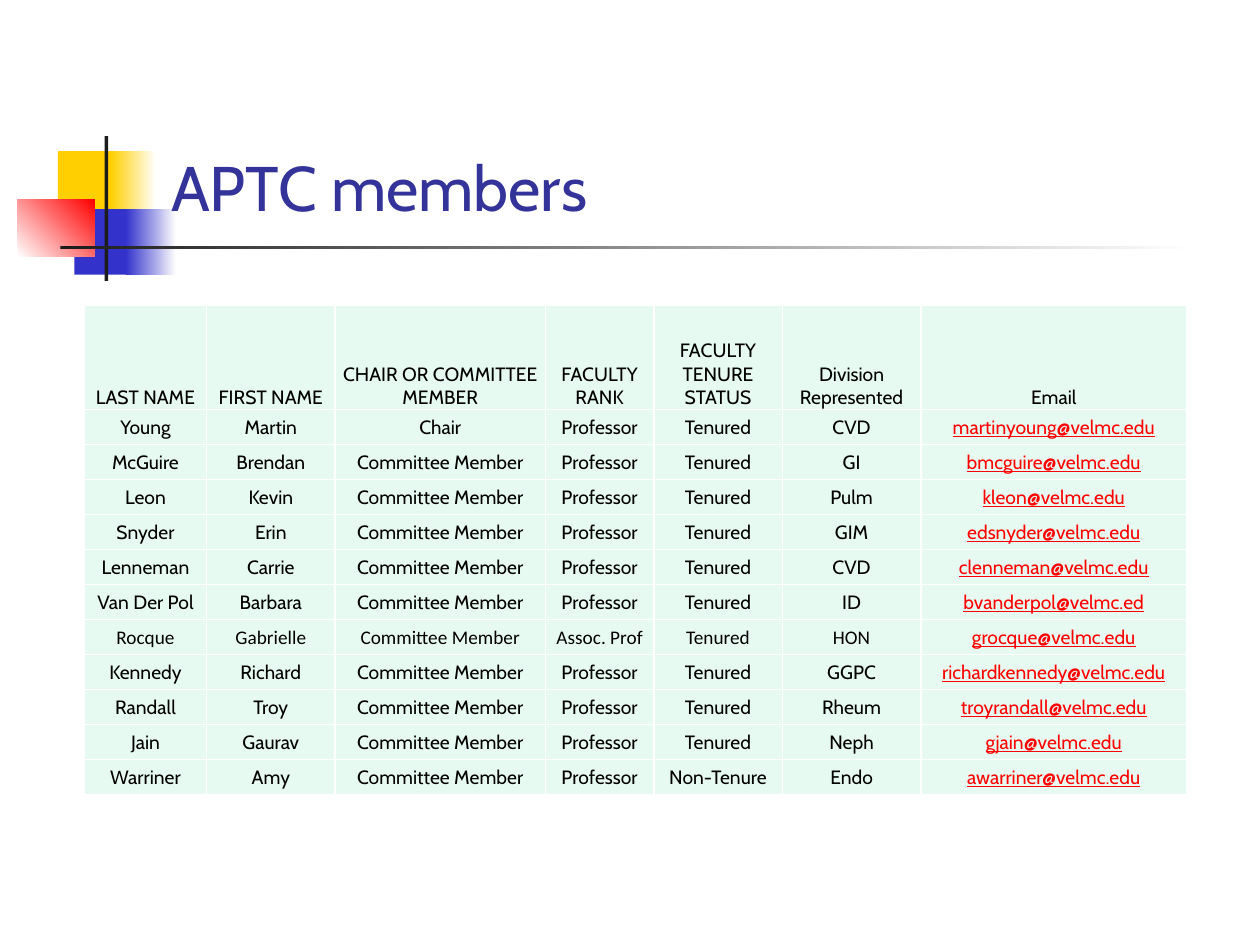
from lxml.etree import SubElement
from pptx import Presentation
from pptx.dml.color import RGBColor
from pptx.enum.shapes import MSO_SHAPE
from pptx.enum.text import MSO_ANCHOR, PP_ALIGN
from pptx.oxml.ns import qn
from pptx.util import Inches, Pt

WHITE = RGBColor(0xFF, 0xFF, 0xFF)
BLACK = RGBColor(0x00, 0x00, 0x00)
YELLOW = RGBColor(0xFF, 0xCF, 0x01)
BLUE = RGBColor(0x33, 0x33, 0xCC)
RED = RGBColor(0xFF, 0x00, 0x00)
CHARCOAL = RGBColor(0x1C, 0x1C, 0x1C)
NAVY = RGBColor(0x33, 0x33, 0x99)
MINT = RGBColor(0xE7, 0xFA, 0xF1)

FONT = "Cabin"
TITLE = "APTC members"
MAIL_DOMAIN = "@velmc.edu"

HEADINGS = ["LAST NAME", "FIRST NAME", "CHAIR OR COMMITTEE MEMBER", "FACULTY RANK",
            "FACULTY TENURE STATUS", "Division Represented", "Email"]
COLUMN_WIDTHS = [0.97, 1.02, 1.67, 0.86, 1.02, 1.1, 2.11]

# last name, first name, division, e-mail, and whatever differs from USUAL
USUAL = {"role": "Committee Member", "rank": "Professor", "tenure": "Tenured", "font": FONT}
MEMBERS = [
    ("Young", "Martin", "CVD", "martinyoung" + MAIL_DOMAIN, {"role": "Chair"}),
    ("McGuire", "Brendan", "GI", "bmcguire" + MAIL_DOMAIN, {}),
    ("Leon", "Kevin", "Pulm", "kleon" + MAIL_DOMAIN, {}),
    ("Snyder", "Erin", "GIM", "edsnyder" + MAIL_DOMAIN, {}),
    ("Lenneman", "Carrie", "CVD", "clenneman" + MAIL_DOMAIN, {}),
    ("Van Der Pol", "Barbara", "ID", "bvanderpol@velmc.ed", {}),
    ("Rocque", "Gabrielle", "HON", "grocque" + MAIL_DOMAIN,
     {"rank": "Assoc. Prof", "font": "Calibri"}),
    ("Kennedy", "Richard", "GGPC", "richardkennedy" + MAIL_DOMAIN, {}),
    ("Randall", "Troy", "Rheum", "troyrandall" + MAIL_DOMAIN, {}),
    ("Jain", "Gaurav", "Neph", "gjain" + MAIL_DOMAIN, {}),
    ("Warriner", "Amy", "Endo", "awarriner" + MAIL_DOMAIN, {"tenure": "Non-Tenure"}),
]

# left, top, width, height, gradient colours (one colour is solid), angle
ORNAMENTS = [
    (0.46, 1.2, 0.48, 0.52, [YELLOW], 0),
    (0.88, 1.2, 0.36, 0.52, [YELLOW, WHITE], 0),
    (0.59, 1.66, 0.46, 0.52, [BLUE], 0),
    (1.0, 1.66, 0.4, 0.52, [BLUE, WHITE], 0),
    (0.14, 1.58, 0.61, 0.46, [WHITE, RED], 45),
    (0.83, 1.08, 0.03, 1.15, [CHARCOAL], 0),
    (0.48, 1.95, 9.0, 0.03, [CHARCOAL, WHITE], 0),
]

TABLE_LEFT, TABLE_TOP, TABLE_HEIGHT, HEADER_HEIGHT = 0.67, 2.42, 3.89, 0.83


def add_ornament(page, left, top, width, height, colours, angle):
    block = page.shapes.add_shape(MSO_SHAPE.RECTANGLE, Inches(left), Inches(top),
                                  Inches(width), Inches(height))
    block.shadow.inherit = False
    block.line.fill.background()
    if len(colours) == 1:
        block.fill.solid()
        block.fill.fore_color.rgb = colours[0]
    else:
        block.fill.gradient()
        block.fill.gradient_angle = angle
        for stop, colour in zip(block.fill.gradient_stops, colours):
            stop.color.rgb = colour


def add_title(page):
    box = page.shapes.add_textbox(Inches(1.26), Inches(0.23), Inches(8.52), Inches(1.6))
    frame = box.text_frame
    frame.word_wrap = True
    frame.vertical_anchor = MSO_ANCHOR.BOTTOM
    para = frame.paragraphs[0]
    para.text = TITLE
    para.font.name, para.font.size = FONT, Pt(36)
    para.font.color.rgb = NAVY


def set_borders(cell):
    properties = cell._tc.get_or_add_tcPr()
    for side in ("a:lnL", "a:lnR", "a:lnT", "a:lnB"):
        line = SubElement(properties, qn(side), w=str(Pt(1)))
        fill = SubElement(line, qn("a:solidFill"))
        SubElement(fill, qn("a:srgbClr"), val=str(WHITE))


def fill_cell(cell, text, anchor, font_name, is_link):
    set_borders(cell)
    cell.fill.solid()
    cell.fill.fore_color.rgb = MINT
    cell.margin_left = cell.margin_right = cell.margin_top = Inches(0.01)
    cell.margin_bottom = 0
    cell.vertical_anchor = anchor
    para = cell.text_frame.paragraphs[0]
    para.text = text
    para.alignment = PP_ALIGN.CENTER
    para.font.name, para.font.size = font_name, Pt(11)
    para.font.color.rgb = RED if is_link else BLACK
    para.font.underline = is_link


def add_members_table(page):
    table = page.shapes.add_table(
        len(MEMBERS) + 1, len(HEADINGS), Inches(TABLE_LEFT), Inches(TABLE_TOP),
        Inches(sum(COLUMN_WIDTHS)), Inches(TABLE_HEIGHT)).table
    for column, width in zip(table.columns, COLUMN_WIDTHS):
        column.width = Inches(width)

    member_height = (TABLE_HEIGHT - HEADER_HEIGHT) / len(MEMBERS)
    for index, row in enumerate(table.rows):
        row.height = Inches(member_height if index else HEADER_HEIGHT)

    for column, heading in enumerate(HEADINGS):
        fill_cell(table.cell(0, column), heading, MSO_ANCHOR.BOTTOM, FONT, False)

    for row, (last, first, division, email, changes) in enumerate(MEMBERS, start=1):
        member = {**USUAL, **changes}
        values = [last, first, member["role"], member["rank"], member["tenure"],
                  division, email]
        for column, value in enumerate(values):
            is_link = value == email
            fill_cell(table.cell(row, column), value, MSO_ANCHOR.MIDDLE,
                      FONT if is_link else member["font"], is_link)


def main():
    deck = Presentation()
    deck.slide_width, deck.slide_height = Inches(10), Inches(7.5)
    page = deck.slides.add_slide(deck.slide_layouts[6])
    for ornament in ORNAMENTS:
        add_ornament(page, *ornament)
    add_title(page)
    add_members_table(page)
    deck.save("out.pptx")


if __name__ == "__main__":
    main()
